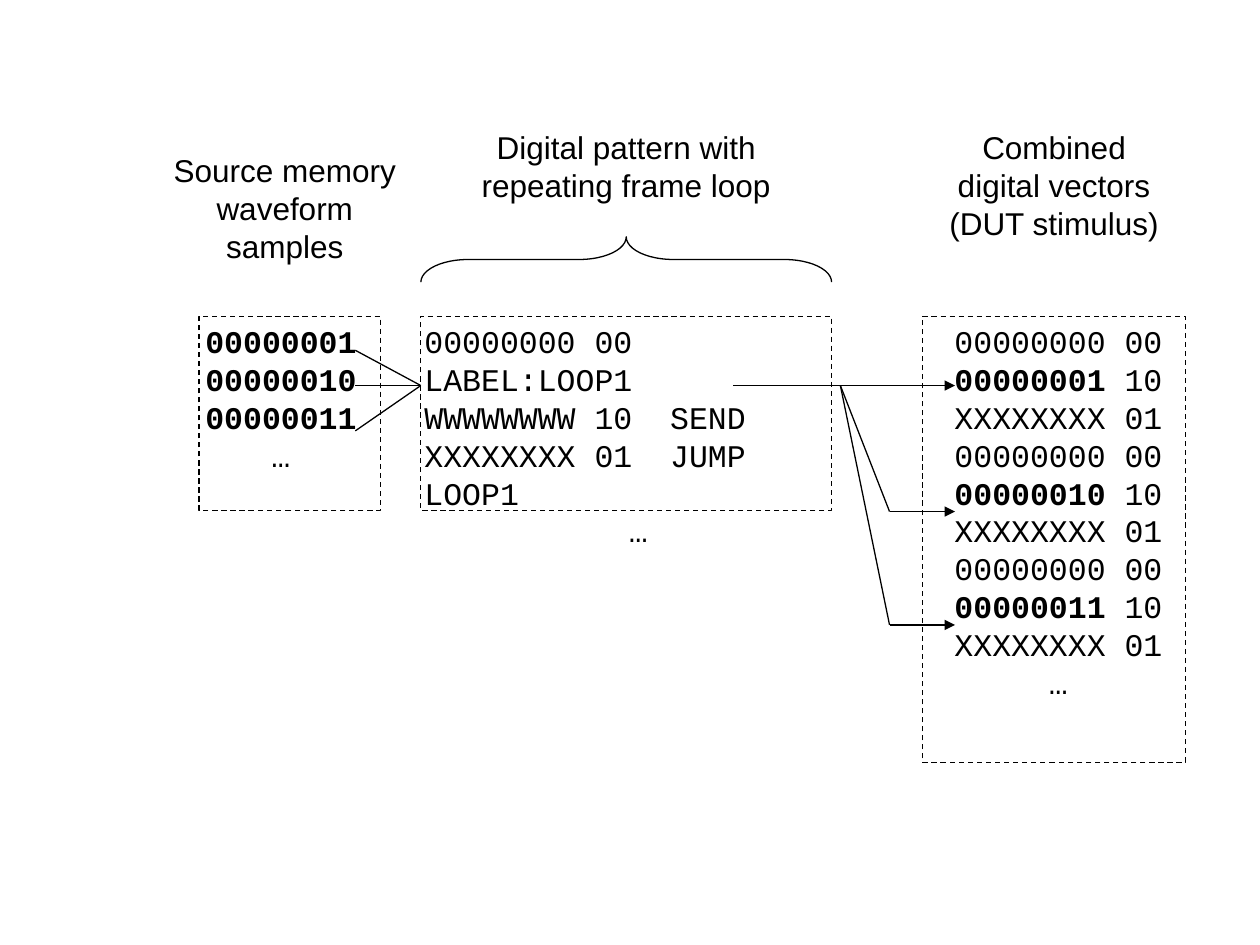
from lxml import etree
from pptx import Presentation
from pptx.dml.color import RGBColor
from pptx.enum.dml import MSO_LINE
from pptx.enum.shapes import MSO_CONNECTOR, MSO_SHAPE
from pptx.enum.text import PP_ALIGN
from pptx.oxml.ns import qn
from pptx.util import Inches, Pt

COLORS = {"ink": "000000"}
INK = RGBColor.from_string(COLORS["ink"])
TITLE_FONT, CODE_FONT = "Arial", "Courier New"
ELLIPSIS = "…"


def add_text(s, x, y, w, h, lines, font, align=PP_ALIGN.CENTER):
    """Each line is a list of (text, bold) runs."""
    tf = s.shapes.add_textbox(Inches(x), Inches(y), Inches(w), Inches(h)).text_frame
    tf.word_wrap = True
    for i, runs in enumerate(lines):
        p = tf.paragraphs[0] if i == 0 else tf.add_paragraph()
        p.alignment = PP_ALIGN.CENTER if runs[0][0] == ELLIPSIS else align
        p.line_spacing = Pt(21.6)
        p.font.name, p.font.size = font, Pt(18)
        p.font.color.rgb = INK
        for text, bold in runs:
            r = p.add_run()
            r.text, r.font.bold = text, bold


def plain(*lines):
    return [[(line, False)] for line in lines]


def add_outline(s, shape, x, y, w, h):
    sp = s.shapes.add_shape(shape, Inches(x), Inches(y), Inches(w), Inches(h))
    sp.shadow.inherit = False
    sp.fill.background()
    sp.line.color.rgb = INK
    sp.line.width = Pt(0.75)
    return sp


def add_frame(s, x, y, w, h):
    add_outline(s, MSO_SHAPE.RECTANGLE, x, y, w, h).line.dash_style = MSO_LINE.DASH


def add_line(s, start, end, arrow=False):
    points = [Inches(v) for v in (*start, *end)]
    c = s.shapes.add_connector(MSO_CONNECTOR.STRAIGHT, *points)
    c.line.color.rgb = INK
    c.line.width = Pt(0.75)
    if arrow:
        etree.SubElement(c.line._get_or_add_ln(), qn("a:tailEnd"), type="triangle")
    etree.SubElement(c._element.spPr, qn("a:effectLst"))


def source_memory(s, x, y, w, h):
    samples = [[(f"{n:08b}", True)] for n in (1, 2, 3)]
    add_text(s, x - 0.07, y, w, h + 0.09, samples + plain(ELLIPSIS), CODE_FONT)
    add_text(s, x - 0.33, y - 1.36, 2.02, 1.27,
             plain("Source memory", "waveform", "samples"), TITLE_FONT)
    add_frame(s, x, y, w, h)


def digital_pattern(s, x, y, w, h):
    code = plain("00000000 00  LABEL:LOOP1", "WWWWWWWW 10  SEND",
                 "XXXXXXXX 01  JUMP LOOP1", ELLIPSIS)
    add_text(s, x - 0.07, y, w + 0.33, h + 0.09, code, CODE_FONT, PP_ALIGN.LEFT)
    add_text(s, x + 0.26, y - 1.54, 2.74, 0.91,
             plain("Digital pattern with repeating frame loop"), TITLE_FONT)
    # Brace over the frame: a left brace turned a quarter
    depth = 0.36
    brace = add_outline(s, MSO_SHAPE.LEFT_BRACE, x + (w - depth) / 2,
                        y - 0.45 - w / 2, depth, w)
    brace.rotation = 90
    brace.adjustments[0] = 1.043
    add_frame(s, x, y, w, h)


def combined_vectors(s, x, y, w, h):
    vectors = []
    for n in (1, 2, 3):
        vectors += [[("00000000 00", False)],
                    [(f"{n:08b}", True), (" 10", False)],
                    [("XXXXXXXX 01", False)]]
    add_text(s, x + 0.07, y, 2.02, h + 0.28, vectors + plain(ELLIPSIS), CODE_FONT)
    add_text(s, x, y - 1.54, w, 1.36,
             plain("Combined", "digital vectors", "(DUT stimulus)"), TITLE_FONT)
    add_frame(s, x, y, w, h)


def sample_flow(s, pattern_left, vectors_left, y):
    # Samples converge on the pattern
    for dy in (-0.28, 0.36, 0):
        add_line(s, (pattern_left, y), (pattern_left - 0.52, y + dy))
    # The pattern fans out to each combined vector
    tip = vectors_left + 0.26
    add_line(s, (tip - 1.76, y), (tip, y), arrow=True)
    for dy in (1, 1.9):
        bend = (tip - 0.52, y + dy)
        add_line(s, bend, (tip, y + dy), arrow=True)
        add_line(s, bend, (tip - 0.91, y))


def main():
    prs = Presentation()
    prs.slide_width, prs.slide_height = Inches(10), Inches(7.5)
    s = prs.slides.add_slide(prs.slide_layouts[6])
    top, pattern_left, vectors_left = 2.51, 3.34, 7.32
    source_memory(s, 1.58, top, 1.44, 1.54)
    digital_pattern(s, pattern_left, top, 3.26, 1.54)
    combined_vectors(s, vectors_left, top, 2.09, 3.54)
    sample_flow(s, pattern_left, vectors_left, top + 0.55)
    prs.save("out.pptx")


if __name__ == "__main__":
    main()
